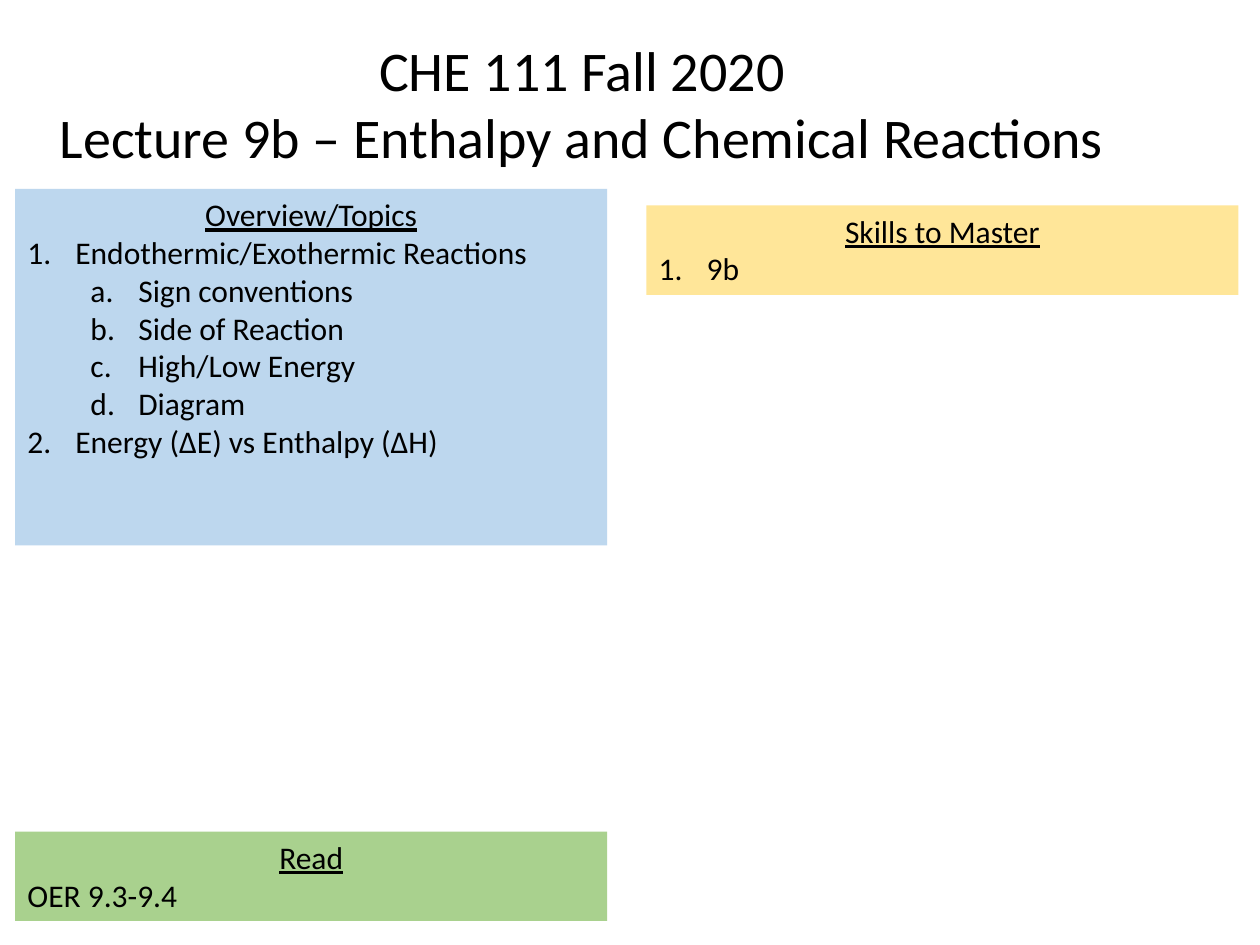
"""Build the opening slide of a chemistry lecture: topics, skills and reading."""
from dataclasses import dataclass

from lxml import etree
from pptx import Presentation
from pptx import util as u
from pptx.dml.color import RGBColor
from pptx.enum import shapes, text
from pptx.oxml.ns import qn

WIDE, HIGH = u.Inches(10), u.Inches(7.5)
HUES = {"ink": "000000", "blue": "BDD7EE", "gold": "FFE699", "green": "A9D18E"}
MARKS = {"1": ("arabicPeriod", 0, 0.38), "a": ("alphaLcPeriod", 1, 0.88)}
HANG = 0.38


@dataclass(frozen=True)
class Area:
    """Place on the slide, in percent of its width and height."""
    left: float
    top: float
    width: float
    height: float

    def fit(self, shape) -> None:
        """Move and size a shape to this area."""
        shape.left, shape.width = (int(WIDE * n / 100) for n in (self.left, self.width))
        shape.top, shape.height = (int(HIGH * n / 100) for n in (self.top, self.height))


@dataclass(frozen=True)
class Panel:
    """Coloured box with a heading and (mark, words) lines."""
    area: Area
    hue: str
    head: str
    lines: tuple[tuple[str, str], ...]


TITLE = ("CHE 111 Fall 2020", "Lecture 9b – Enthalpy and Chemical Reactions")
TITLE_AREA = Area(3.3, 3.07, 85.8, 15.73)
PANELS = (
    Panel(Area(1.2, 20, 47, 37.73), "blue", "Overview/Topics", (
        ("1", "Endothermic/Exothermic Reactions"),
        ("a", "Sign conventions"),
        ("a", "Side of Reaction"),
        ("a", "High/Low Energy"),
        ("a", "Diagram"),
        ("1", "Energy (ΔE) vs Enthalpy (ΔH)"),
    )),
    Panel(Area(51.3, 21.73, 47, 9.47), "gold", "Skills to Master", (("1", "9b"),)),
    Panel(Area(1.2, 88, 47, 9.47), "green", "Read", (("", "OER 9.3-9.4"),)),
)


def write(frame, words: str, *, size: float = 18, center: bool = False,
          under: bool = False, mark: str = "") -> None:
    """Put one formatted paragraph at the end of a text frame."""
    first = frame.paragraphs[0]
    para = frame.add_paragraph() if first.runs else first
    para.alignment = text.PP_ALIGN.CENTER if center else text.PP_ALIGN.LEFT
    run = para.add_run()
    run.text = words
    run.font.name, run.font.size = "Calibri", u.Pt(size)
    run.font.underline = under
    run.font.color.rgb = RGBColor.from_string(HUES["ink"])
    if mark:
        style, para.level, indent = MARKS[mark]
        props = para._p.get_or_add_pPr()
        props.set("marL", str(u.Inches(indent)))
        props.set("indent", str(-u.Inches(HANG)))
        etree.SubElement(props, qn("a:buFont"), typeface="+mj-lt")
        etree.SubElement(props, qn("a:buAutoNum"), type=style)


def draw_title(slide) -> None:
    """Fill the title placeholder with its centred lines."""
    title = slide.shapes.title
    TITLE_AREA.fit(title)
    frame = title.text_frame
    frame.word_wrap = False
    frame.auto_size = text.MSO_AUTO_SIZE.NONE
    frame.vertical_anchor = text.MSO_ANCHOR.TOP
    for line in TITLE:
        write(frame, line, size=32, center=True)


def draw_panel(slide, panel: Panel) -> None:
    """Draw a coloured box with its heading and lines."""
    box = slide.shapes.add_shape(shapes.MSO_SHAPE.RECTANGLE, 0, 0, 0, 0)
    panel.area.fit(box)
    box.shadow.inherit = False
    box.fill.solid()
    box.fill.fore_color.rgb = RGBColor.from_string(HUES[panel.hue])
    box.line.fill.background()
    frame = box.text_frame
    frame.word_wrap = True
    frame.vertical_anchor = text.MSO_ANCHOR.TOP
    write(frame, panel.head, center=True, under=True)
    for mark, words in panel.lines:
        write(frame, words, mark=mark)


def main() -> None:
    """Build and save the deck."""
    deck = Presentation()
    deck.slide_width, deck.slide_height = WIDE, HIGH
    slide = deck.slides.add_slide(deck.slide_layouts.get_by_name("Title Only"))
    draw_title(slide)
    for panel in PANELS:
        draw_panel(slide, panel)
    deck.save("out.pptx")


if __name__ == "__main__":
    main()
